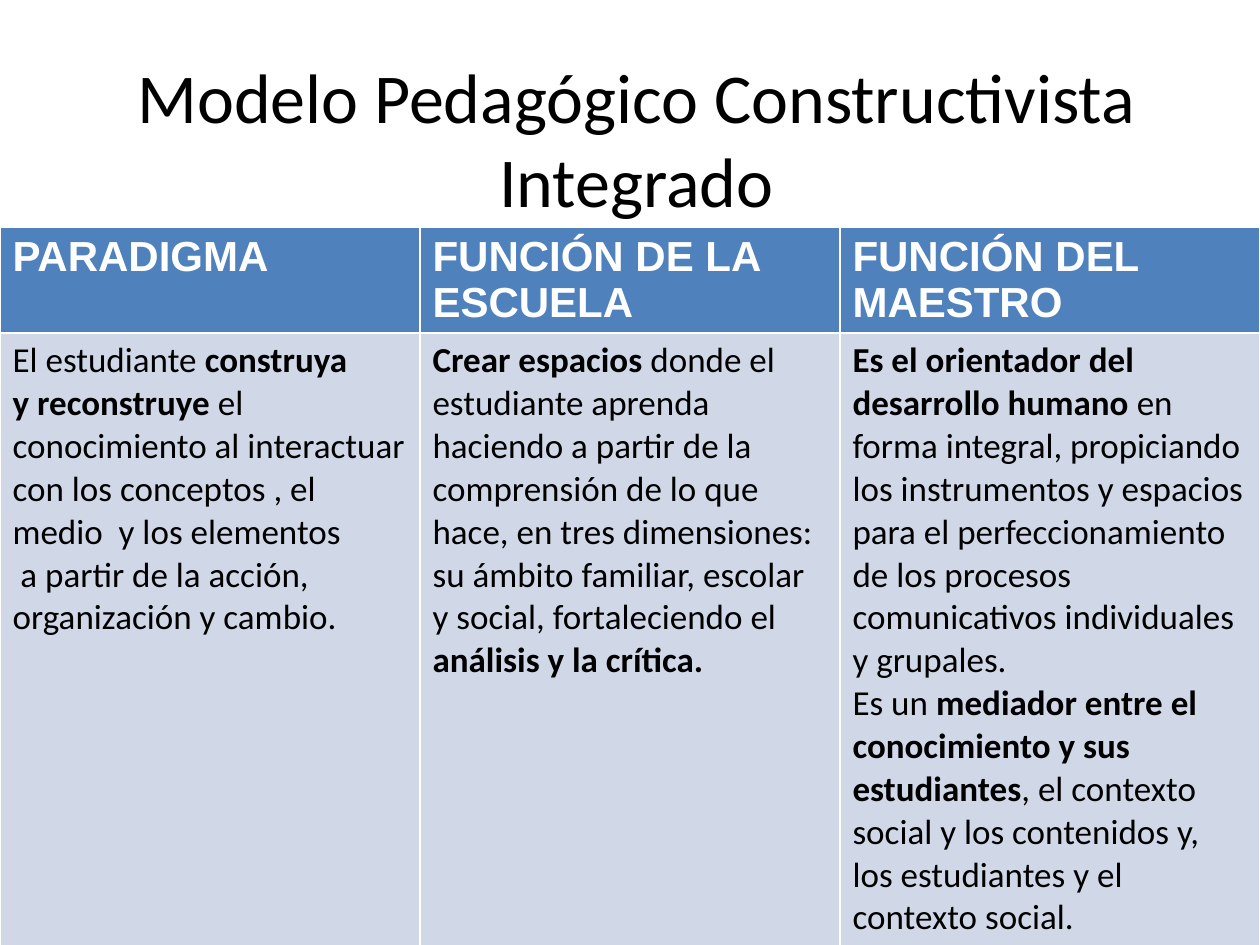
"""Build the slide on the integrated constructivist pedagogical model."""

from dataclasses import dataclass

import pptx
import pptx.dml.color
import pptx.enum.text
import pptx.util

Inches = pptx.util.Inches
RGBColor = pptx.dml.color.RGBColor

BLACK = RGBColor(0x00, 0x00, 0x00)
WHITE = RGBColor(0xFF, 0xFF, 0xFF)
HEADER_BLUE = RGBColor(0x4F, 0x81, 0xBD)
BODY_BLUE = RGBColor(0xD0, 0xD8, 0xE8)

SLIDE_WIDTH = 10
TABLE_TOP = 1.8
ROW_HEIGHTS = (0.82, 4.85)


@dataclass(frozen=True)
class Run:
    text: str
    bold: bool = False


@dataclass(frozen=True)
class Column:
    heading: str
    paragraphs: tuple[tuple[Run, ...], ...]


@dataclass(frozen=True)
class CellStyle:
    font_name: str
    size: int
    color: RGBColor
    fill: RGBColor


HEADER_STYLE = CellStyle("Arial", 24, WHITE, HEADER_BLUE)
BODY_STYLE = CellStyle("Calibri", 20, BLACK, BODY_BLUE)

COLUMNS = (
    Column("PARADIGMA", (
        (Run("El estudiante "), Run("construya", True)),
        (Run("y reconstruye ", True),
         Run("el conocimiento al interactuar con los conceptos , el medio  y los elementos")),
        (Run(" a partir de la acción, organización y cambio."),),
    )),
    Column("FUNCIÓN DE LA ESCUELA", (
        (Run("Crear espacios ", True),
         Run("donde el estudiante aprenda haciendo a partir de la comprensión de lo que "
             "hace, en tres dimensiones: su ámbito familiar, escolar y social, "
             "fortaleciendo el "),
         Run("análisis y la crítica.", True)),
    )),
    Column("FUNCIÓN DEL MAESTRO", (
        (Run("Es el orientador del desarrollo humano ", True),
         Run("en forma integral, propiciando los instrumentos y espacios para el "
             "perfeccionamiento de los procesos comunicativos individuales y grupales.")),
        (Run("Es un "),
         Run("mediador entre el conocimiento y sus estudiantes", True),
         Run(", el contexto social y los contenidos y, los estudiantes y el contexto social.")),
    )),
)


def format_font(font: pptx.text.text.Font, name: str, size: int, color: RGBColor) -> None:
    """Apply a typeface, size and colour."""
    font.name = name
    font.size = pptx.util.Pt(size)
    font.color.rgb = color


def add_title(slide: pptx.slide.Slide, text: str) -> None:
    """Place and format the title placeholder."""
    title = slide.shapes.title
    title.left, title.top = Inches(0.55), Inches(0.47)
    title.width, title.height = Inches(9), Inches(1.25)
    title.text_frame.text = text
    title.text_frame.vertical_anchor = pptx.enum.text.MSO_ANCHOR.MIDDLE
    paragraph = title.text_frame.paragraphs[0]
    paragraph.alignment = pptx.enum.text.PP_ALIGN.CENTER
    format_font(paragraph.font, "Calibri", 40, BLACK)


def fill_cell(cell: pptx.table._Cell, paragraphs: tuple[tuple[Run, ...], ...],
              style: CellStyle) -> None:
    """Write styled paragraphs into a table cell."""
    cell.fill.solid()
    cell.fill.fore_color.rgb = style.fill
    for index, runs in enumerate(paragraphs):
        frame = cell.text_frame
        paragraph = frame.add_paragraph() if index else frame.paragraphs[0]
        format_font(paragraph.font, style.font_name, style.size, style.color)
        for item in runs:
            run = paragraph.add_run()
            run.text = item.text
            format_font(run.font, style.font_name, style.size, style.color)
            run.font.bold = item.bold


def add_model_table(slide: pptx.slide.Slide, columns: tuple[Column, ...]) -> None:
    """Add the table with one heading and one description per column."""
    table = slide.shapes.add_table(
        len(ROW_HEIGHTS), len(columns), Inches(0), Inches(TABLE_TOP),
        Inches(SLIDE_WIDTH), Inches(sum(ROW_HEIGHTS))).table
    for row, height in zip(table.rows, ROW_HEIGHTS):
        row.height = Inches(height)
    for index, column in enumerate(columns):
        fill_cell(table.cell(0, index), ((Run(column.heading, True),),), HEADER_STYLE)
        fill_cell(table.cell(1, index), column.paragraphs, BODY_STYLE)


def main() -> None:
    """Create and save the presentation."""
    presentation = pptx.Presentation()
    presentation.slide_width = Inches(SLIDE_WIDTH)
    presentation.slide_height = Inches(7.5)
    slide = presentation.slides.add_slide(presentation.slide_layouts.get_by_name("Title Only"))
    add_title(slide, "Modelo Pedagógico Constructivista Integrado")
    add_model_table(slide, COLUMNS)
    presentation.save("out.pptx")


if __name__ == "__main__":
    main()
